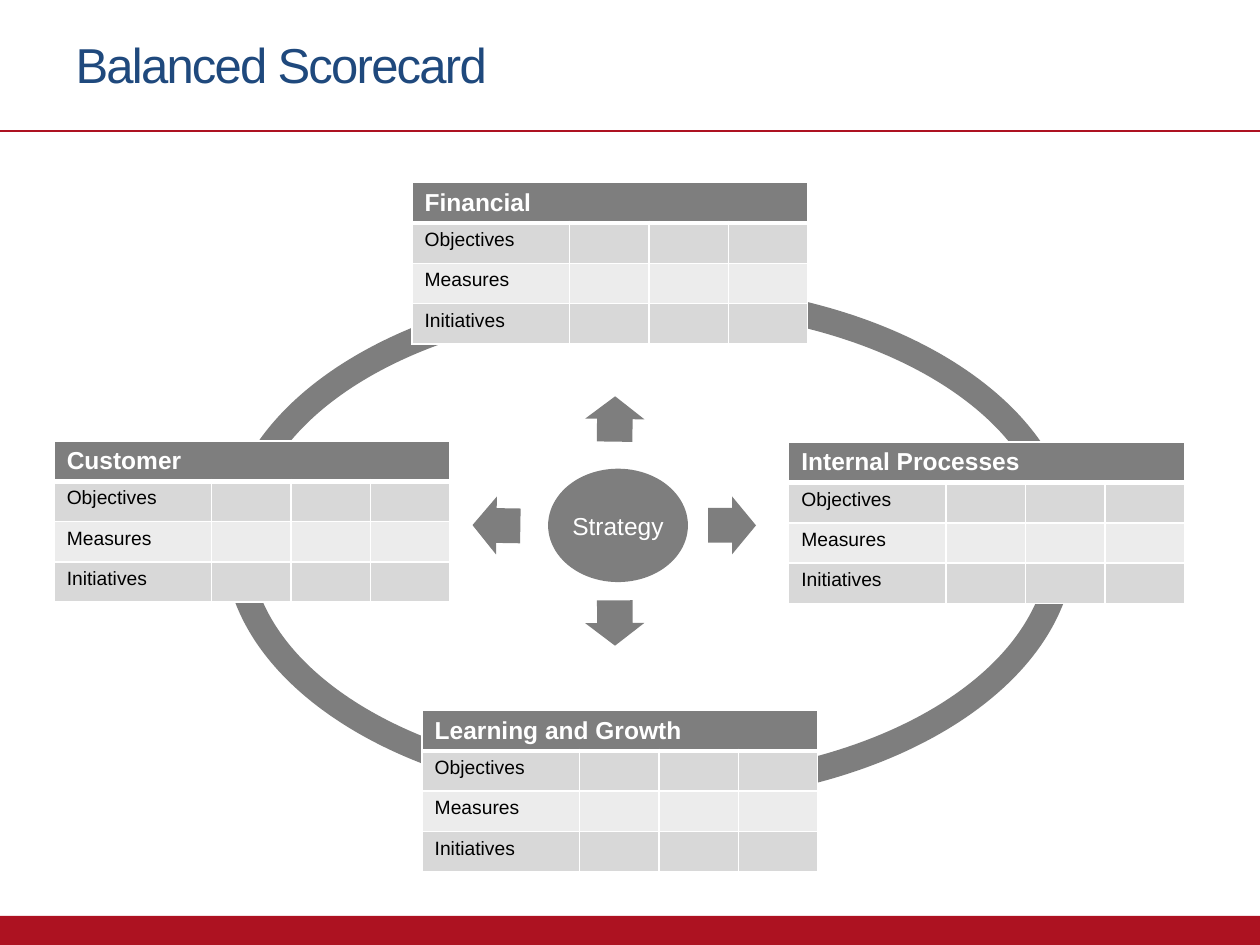
from lxml import etree
from pptx import Presentation
from pptx.dml.color import RGBColor
from pptx.enum.shapes import MSO_CONNECTOR, MSO_SHAPE
from pptx.enum.text import MSO_ANCHOR, PP_ALIGN
from pptx.oxml.ns import qn
from pptx.util import Inches, Pt

STRAIGHT = MSO_CONNECTOR.STRAIGHT
RECTANGLE, OVAL = MSO_SHAPE.RECTANGLE, MSO_SHAPE.OVAL
BLOCK_ARC, RIGHT_ARROW = MSO_SHAPE.BLOCK_ARC, MSO_SHAPE.RIGHT_ARROW
MIDDLE = MSO_ANCHOR.MIDDLE
LEFT, CENTER = PP_ALIGN.LEFT, PP_ALIGN.CENTER

RED, NAVY, GRAY = "AD1221", "1F497D", "7E7E7E"
BLACK, WHITE = "000000", "FFFFFF"
BAND_FILLS = ("D8D8D8", "ECECEC")
ROW_LABELS = ("Objectives", "Measures", "Initiatives")
COLUMN_WIDTHS = (1.25, 0.63, 0.63, 0.63)
ROW_HEIGHT = 0.32
PERSPECTIVES = (
    ("Financial", 3.27, 1.45),
    ("Customer", 0.43, 3.5),
    ("Learning and Growth", 3.35, 5.64),
    ("Internal Processes", 6.26, 3.51),
)
ARROWS = (
    (5.62, 3.94, 0.38, 0.46, 0),
    (4.7, 3.09, 0.36, 0.47, 270.8),
    (4.7, 4.71, 0.36, 0.47, 89.6),
    (3.75, 3.94, 0.38, 0.46, 180.9),
)


def color(value):
    """Return the colour for a hex string."""
    return RGBColor.from_string(value)


def format_run(run, size, fill, bold=False):
    """Set the font, size and colour of a run."""
    run.font.name, run.font.size, run.font.bold = "Arial", Pt(size), bold
    run.font.color.rgb = color(fill)


def add_filled_shape(slide, kind, box, fill, adjustments=()):
    """Add a flat shape without an outline."""
    shape = slide.shapes.add_shape(kind, *map(Inches, box))
    shape.shadow.inherit = False
    shape.fill.solid()
    shape.fill.fore_color.rgb = color(fill)
    shape.line.fill.background()
    for index, value in enumerate(adjustments):
        shape.adjustments[index] = value
    return shape


def place_title(slide, box):
    """Move and format the title placeholder."""
    title = slide.shapes.title
    title.left, title.top, title.width, title.height = map(Inches, box)
    frame = title.text_frame
    frame.text = "Balanced Scorecard"
    frame.vertical_anchor = MIDDLE
    frame.margin_top = frame.margin_bottom = 0
    paragraph = frame.paragraphs[0]
    paragraph.alignment = LEFT
    run = paragraph.runs[0]
    format_run(run, 28, NAVY)
    run.font._element.set("spc", "-100")


def add_rule(slide, left, top, width):
    """Add the red line below the title."""
    line = slide.shapes.add_connector(
        STRAIGHT, Inches(left), Inches(top), Inches(left + width), Inches(top))
    line.line.color.rgb = color(RED)
    line.line.width = Pt(1.5)
    etree.SubElement(line._element.spPr, qn("a:effectLst"))


def set_borders(cell, top=1, bottom=1):
    """Give a cell white borders of the given widths in points."""
    properties = cell._tc.get_or_add_tcPr()
    for side, width in (("L", 1), ("R", 1), ("T", top), ("B", bottom)):
        border = etree.SubElement(properties, qn(f"a:ln{side}"), w=str(Pt(width)))
        fill = etree.SubElement(border, qn("a:solidFill"))
        etree.SubElement(fill, qn("a:srgbClr"), val=WHITE)


def fill_cell(cell, text, fill, size, text_color, bold):
    """Fill a cell and write its text, keeping empty cells low."""
    cell.fill.solid()
    cell.fill.fore_color.rgb = color(fill)
    paragraph = cell.text_frame.paragraphs[0]
    if text:
        paragraph.text = text
        format_run(paragraph.runs[0], size, text_color, bold)
    else:
        etree.SubElement(paragraph._p, qn("a:endParaRPr"), sz=str(size * 100))


def add_perspective(slide, name, left, top):
    """Add the table of one scorecard perspective."""
    row_count = len(ROW_LABELS) + 1
    table = slide.shapes.add_table(
        row_count, len(COLUMN_WIDTHS), Inches(left), Inches(top),
        Inches(sum(COLUMN_WIDTHS)), Inches(ROW_HEIGHT * row_count)).table
    for column, width in zip(table.columns, COLUMN_WIDTHS):
        column.width = Inches(width)
    for row_index, label in enumerate((name, *ROW_LABELS)):
        header = row_index == 0
        fill = GRAY if header else BAND_FILLS[(row_index - 1) % 2]
        size, text_color = (14, WHITE) if header else (11, BLACK)
        for column_index in range(len(COLUMN_WIDTHS)):
            cell = table.cell(row_index, column_index)
            set_borders(cell, 3 if row_index == 1 else 1, 3 if header else 1)
            text = label if column_index == 0 else ""
            fill_cell(cell, text, fill, size, text_color, header)
    table.cell(0, 0).merge(table.cell(0, len(COLUMN_WIDTHS) - 1))


def add_strategy(slide, box):
    """Add the central ellipse and the arrows around it."""
    for *arrow_box, rotation in ARROWS:
        arrow = add_filled_shape(slide, RIGHT_ARROW, arrow_box, GRAY, (0.6, 0.5))
        arrow.rotation = rotation
    frame = add_filled_shape(slide, OVAL, box, GRAY).text_frame
    frame.text = "Strategy"
    frame.margin_left = frame.margin_right = 0
    frame.vertical_anchor = MIDDLE
    frame.paragraphs[0].alignment = CENTER
    format_run(frame.paragraphs[0].runs[0], 14, WHITE)


def main():
    """Build and save the presentation."""
    presentation = Presentation()
    presentation.slide_width, presentation.slide_height = Inches(10), Inches(7.5)
    slide = presentation.slides.add_slide(presentation.slide_layouts[5])
    place_title(slide, (0.5, 0.15, 7.29, 0.72))
    add_filled_shape(slide, RECTANGLE, (0, 7.27, 10, 0.23), RED)
    add_rule(slide, 0, 1.04, 10)
    add_filled_shape(
        slide, BLOCK_ARC, (1.78, 2.25, 6.75, 4.13), GRAY, (0.07, 215.93, 0.05))
    add_strategy(slide, (4.35, 3.72, 1.11, 0.9))
    for name, left, top in PERSPECTIVES:
        add_perspective(slide, name, left, top)
    presentation.save("out.pptx")


if __name__ == "__main__":
    main()
